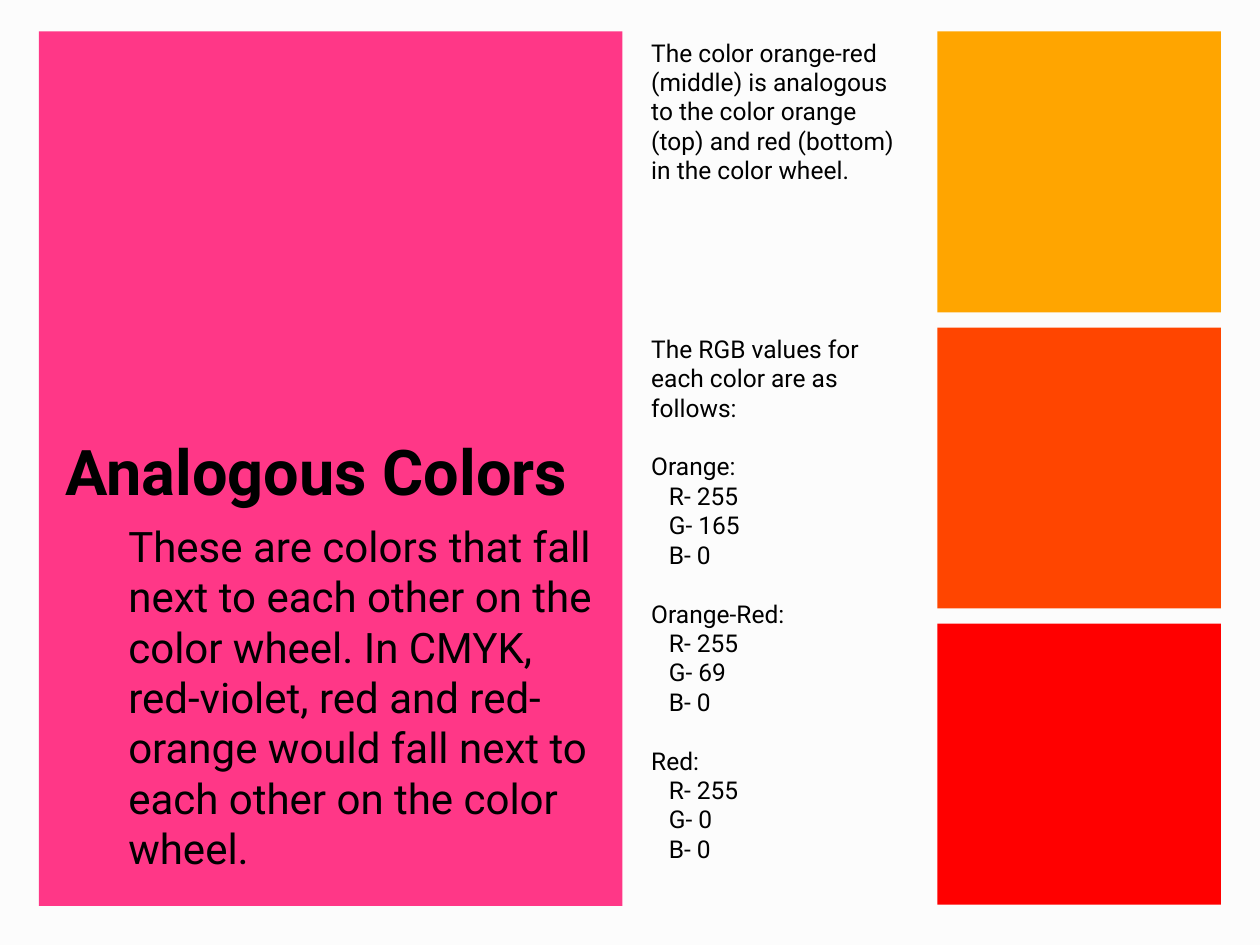
from pptx import Presentation
from pptx.dml.color import RGBColor
from pptx.enum.shapes import MSO_SHAPE as Shape
from pptx.enum.text import MSO_ANCHOR as Anchor
from pptx.util import Inches, Pt

FONT = "Roboto"
SWATCHES = [
    ("Orange", "FFA500", (255, 165, 0)),
    ("Orange-Red", "FF4500", (255, 69, 0)),
    ("Red", "FF0000", (255, 0, 0)),
]
TOP, SIDE, HIGH, STEP = 0.25, 2.25, 2.23, 2.35


def paint(fill, color):
    fill.solid()
    fill.fore_color.rgb = RGBColor.from_string(color)


def add_rect(slide, x, y, w, h, color):
    rect = slide.shapes.add_shape(
        Shape.RECTANGLE, Inches(x), Inches(y), Inches(w), Inches(h))
    rect.shadow.inherit = False
    paint(rect.fill, color)
    rect.line.fill.background()


def add_text(slide, x, y, w, h, text, size, bold=False, anchor=Anchor.TOP):
    box = slide.shapes.add_textbox(Inches(x), Inches(y), Inches(w), Inches(h))
    frame = box.text_frame
    frame.word_wrap = True
    frame.vertical_anchor = anchor
    frame.text = text
    for para in frame.paragraphs:
        for run in para.runs:
            font = run.font
            font.name, font.size, font.bold = FONT, Pt(size), bold
            paint(font.fill, "000000")
    return frame.paragraphs


def indent(para, left):
    props = para._p.get_or_add_pPr()
    props.set("marL", str(Inches(left)))
    props.set("indent", "0")


# Pink panel with the heading and the definition
def add_panel(slide, x, y, w, h):
    add_rect(slide, x, y, w, h, "FF3787")
    left, wide = x + 0.11, w - 0.24
    add_text(slide, left, y + 2.56, wide, 1.27, "Analogous Colors", 36,
             bold=True, anchor=Anchor.BOTTOM)
    body = add_text(
        slide, left, y + 3.83, wide, 2.62,
        "These are colors that fall next to each other on the color wheel. "
        "In CMYK, red-violet, red and red-orange would fall next to each "
        "other on the color wheel.", 24)
    indent(body[0], 0.5)


# Explanation and the list of RGB values
def add_notes(slide, x, y, w):
    add_text(slide, x, y, w, HIGH,
             "The color orange-red (middle) is analogous to the color orange "
             "(top) and red (bottom) in the color wheel.", 14)
    lines = ["The RGB values for each color are as follows:"]
    for name, _, values in SWATCHES:
        lines.append(f"{name}:")
        lines += [f"{key}- {value}" for key, value in zip("RGB", values)]
    paras = add_text(slide, x, y + STEP, w, 4.65, "\n".join(lines), 14)
    for i, para in enumerate(paras[1:]):
        if i % 4 == 0:
            para.space_before = Pt(16.8)
        else:
            indent(para, 0.14)


# Column of color squares
def add_swatches(slide, x, y, w):
    for i, (_, color, _) in enumerate(SWATCHES):
        add_rect(slide, x, y + i * STEP, w, HIGH, color)


def main():
    prs = Presentation()
    prs.slide_width, prs.slide_height = Inches(10), Inches(7.5)
    slide = prs.slides.add_slide(prs.slide_layouts[6])
    paint(slide.background.fill, "FCFCFC")
    add_panel(slide, 0.31, TOP, 4.63, 6.94)
    add_notes(slide, 5.07, TOP, SIDE)
    add_swatches(slide, 7.44, TOP, SIDE)
    prs.save("out.pptx")


if __name__ == "__main__":
    main()
